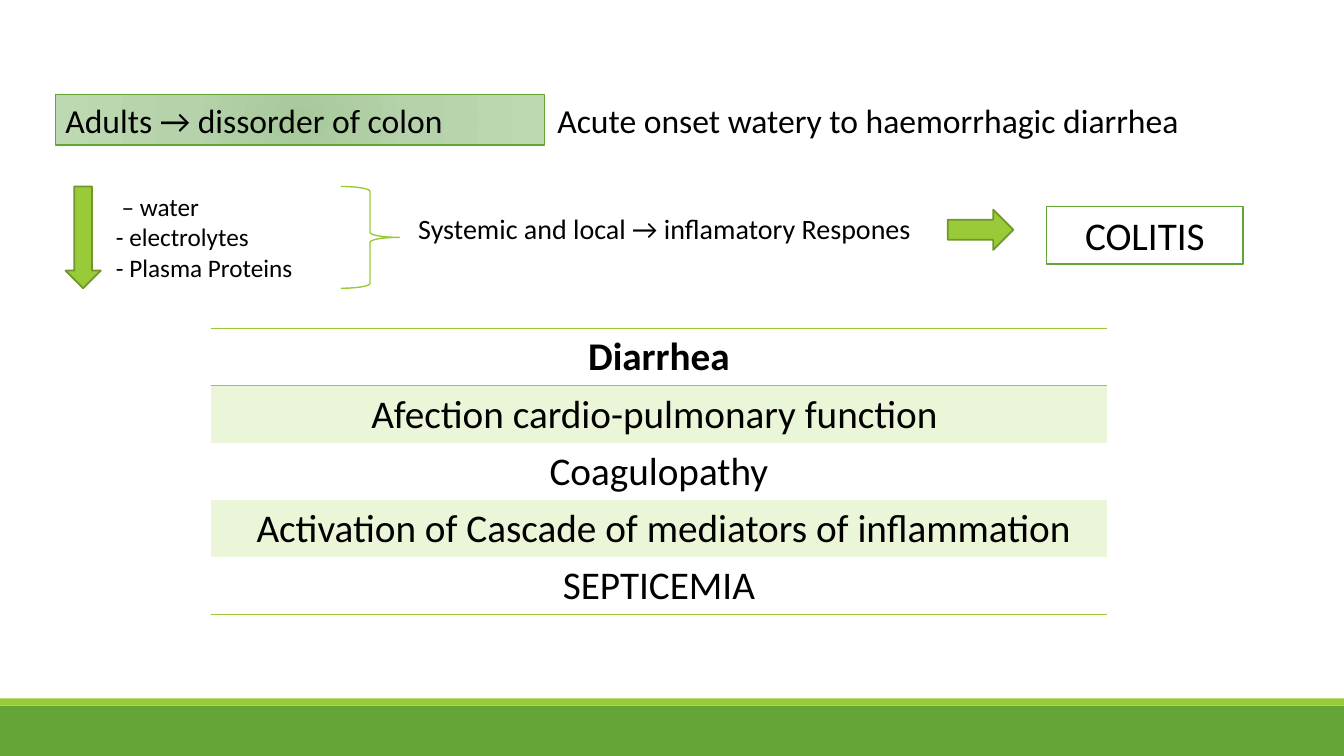
"""Build a slide on colon disorder, diarrhea and colitis."""
from lxml import etree
from pptx import Presentation
from pptx.dml.color import RGBColor
from pptx.enum.shapes import MSO_SHAPE
from pptx.enum.text import MSO_ANCHOR, MSO_AUTO_SIZE, PP_ALIGN
from pptx.oxml import parse_xml
from pptx.oxml.ns import nsdecls, qn
from pptx.util import Inches, Pt

LIME, GREEN, OLIVE = "99CB38", "63A537", "719629"
WHITE, BLACK, PALE = "FFFFFF", "000000", "EBF5D7"
NO_GRID = "{2D5ABB26-0587-4C30-8999-92F81FD0307C}"
GLOW = [(0, "A7C99A"), (45, "B5D2AA"), (100, "BCD9B1")]
ROWS = [
    "Diarrhea",
    "Afection cardio-pulmonary function ",
    "Coagulopathy",
    " Activation of Cascade of mediators of inflammation",
    "SEPTICEMIA",
]


def color(code):
    return RGBColor.from_string(code)


def style(para, size, align=PP_ALIGN.LEFT, bold=False):
    para.alignment = align
    font = para.font
    font.name, font.size, font.bold = "Calibri", Pt(size), bold
    font.color.rgb = color(BLACK)


def write(shape, lines, size, align=PP_ALIGN.LEFT, indent=0.1):
    frame = shape.text_frame
    frame.word_wrap = True
    frame.auto_size = MSO_AUTO_SIZE.SHAPE_TO_FIT_TEXT
    frame.vertical_anchor = MSO_ANCHOR.TOP
    frame.margin_left = Inches(indent)
    frame.text = "\n".join(lines)
    for para in frame.paragraphs:
        style(para, size, align)


def add_text(slide, box, lines, size, indent=0.1):
    shape = slide.shapes.add_textbox(*map(Inches, box))
    write(shape, lines, size, indent=indent)


def add_form(slide, kind, box, fill=None, line=None, width=1.25):
    shape = slide.shapes.add_shape(kind, *map(Inches, box))
    shape.shadow.inherit = False
    if fill:
        shape.fill.solid()
        shape.fill.fore_color.rgb = color(fill)
    else:
        shape.fill.background()
    if line:
        shape.line.color.rgb = color(line)
        shape.line.width = Pt(width)
    else:
        shape.line.fill.background()
    return shape


def set_glow(shape, stops):
    marks = "".join(
        f'<a:gs pos="{pos * 1000}"><a:srgbClr val="{code}"/></a:gs>'
        for pos, code in stops
    )
    grad = parse_xml(
        f'<a:gradFill {nsdecls("a")} rotWithShape="1"><a:gsLst>{marks}</a:gsLst>'
        '<a:path path="circle"><a:fillToRect l="100000" t="100000" '
        'r="100000" b="100000"/></a:path></a:gradFill>'
    )
    props = shape.element.spPr
    props.replace(props.find(qn("a:noFill")), grad)


def add_edge(cell, side):
    props = cell._tc.get_or_add_tcPr()
    edge = etree.SubElement(props, qn(f"a:{side}"), w=str(Pt(1)))
    fill = etree.SubElement(edge, qn("a:solidFill"))
    etree.SubElement(fill, qn("a:srgbClr"), val=LIME)


def add_grid(slide, box, rows):
    frame = slide.shapes.add_table(len(rows), 1, *map(Inches, box))
    table = frame.table
    table.first_row = table.horz_banding = False
    next(frame.element.iter(qn("a:tableStyleId"))).text = NO_GRID
    edges = {0: ("lnT", "lnB"), len(rows) - 1: ("lnB",)}
    for index, words in enumerate(rows):
        cell = table.cell(index, 0)
        cell.text = words
        style(cell.text_frame.paragraphs[0], 28, PP_ALIGN.CENTER, index == 0)
        for side in edges.get(index, ()):
            add_edge(cell, side)
        if index % 2:
            cell.fill.solid()
            cell.fill.fore_color.rgb = color(PALE)
        else:
            cell.fill.background()


def main():
    deck = Presentation()
    deck.slide_width, deck.slide_height = Inches(13.33), Inches(7.5)
    slide = deck.slides.add_slide(deck.slide_layouts[6])

    add_form(slide, MSO_SHAPE.RECTANGLE, (0, 7, 13.33, 0.5), GREEN)
    add_form(slide, MSO_SHAPE.RECTANGLE, (0, 6.93, 13.33, 0.07), LIME)

    add_text(slide, (5.43, 0.94, 6.9, 0.5),
             ["Acute onset watery to haemorrhagic diarrhea"], 24)
    adults = add_form(slide, MSO_SHAPE.RECTANGLE, (0.55, 0.94, 4.85, 0.5),
                      line=GREEN, width=1)
    set_glow(adults, GLOW)
    write(adults, ["Adults → dissorder of colon"], 24)

    add_text(slide, (0.55, 1.85, 3.41, 1.01),
             [" – water", "- electrolytes", "- Plasma Proteins"], 18, 0.6)
    add_form(slide, MSO_SHAPE.DOWN_ARROW, (0.65, 1.85, 0.35, 1.01), LIME, OLIVE)
    add_form(slide, MSO_SHAPE.RIGHT_BRACE, (3.38, 1.85, 0.58, 1.01),
             line=LIME, width=1)
    add_text(slide, (4.05, 2.05, 5.67, 0.44),
             ["Systemic and local → inflamatory Respones"], 20)
    add_form(slide, MSO_SHAPE.RIGHT_ARROW, (9.4, 2.08, 0.65, 0.4), LIME, OLIVE)
    colitis = add_form(slide, MSO_SHAPE.RECTANGLE, (10.38, 2.05, 1.95, 0.57),
                       WHITE, GREEN)
    write(colitis, ["COLITIS"], 28, PP_ALIGN.CENTER)

    add_grid(slide, (2.09, 3.26, 8.89, 2.83), ROWS)
    deck.save("out.pptx")


if __name__ == "__main__":
    main()
